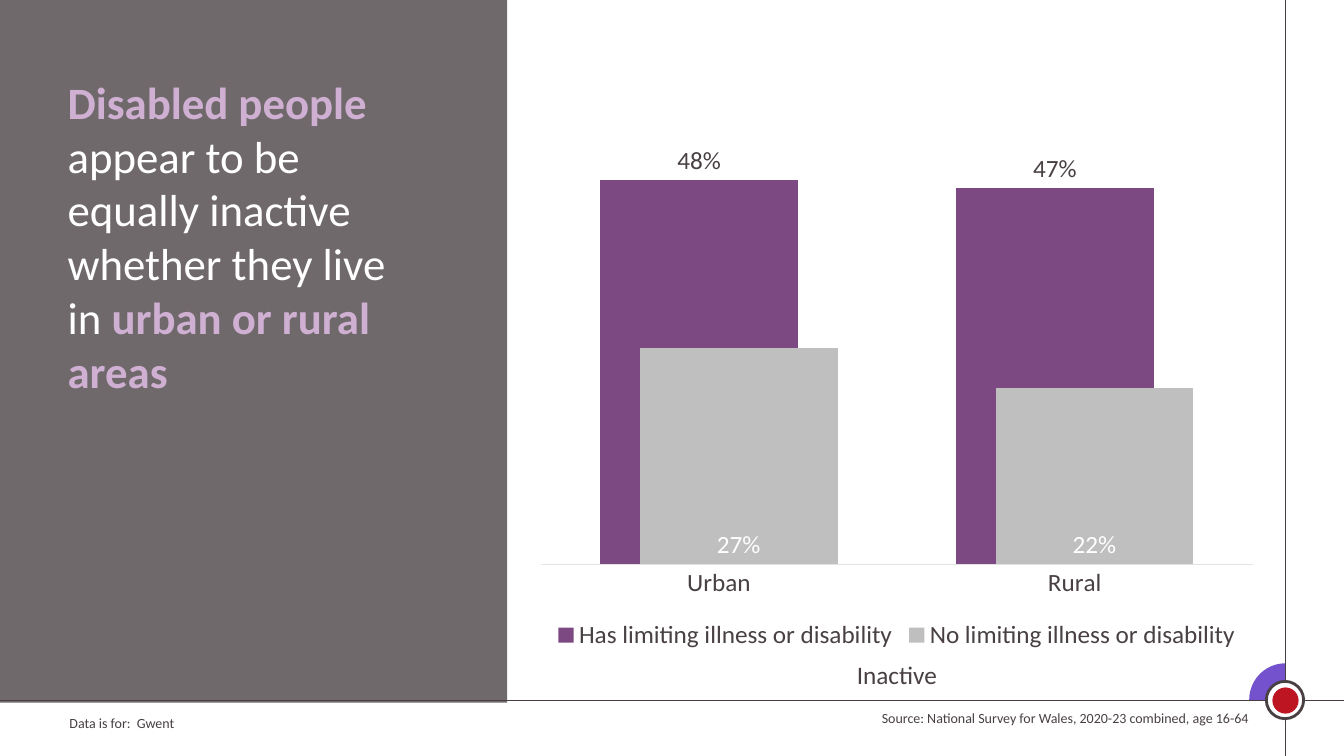
from dataclasses import dataclass

import pptx
import pptx.chart.data
import pptx.dml.color
import pptx.enum.chart
import pptx.enum.shapes
import pptx.enum.text
import pptx.oxml
import pptx.oxml.ns
import pptx.util
from pptx.util import Inches

SHAPE = pptx.enum.shapes.MSO_SHAPE
ALIGN = pptx.enum.text.PP_ALIGN
LABEL = pptx.enum.chart.XL_LABEL_POSITION
DARK, WHITE, LILAC = "484043", "FFFFFF", "CFB0D3"
FONT = "Calibri"


@dataclass
class Box:
    left: float
    top: float
    width: float
    height: float

    def place(self) -> tuple:
        return tuple(Inches(n) for n in (self.left, self.top, self.width, self.height))


@dataclass
class Form:
    kind: int
    box: Box
    fill: str
    line: str = ""
    weight: float = 0
    alpha: int = 100
    angles: tuple = ()


@dataclass
class Bars:
    name: str
    values: tuple
    color: str
    ink: str
    spot: int


def rgb(code: str) -> pptx.dml.color.RGBColor:
    return pptx.dml.color.RGBColor.from_string(code)


def style(font, size: float, color: str, bold: bool = False) -> None:
    font.name, font.size, font.bold = FONT, pptx.util.Pt(size), bold
    font.color.rgb = rgb(color)


def write(shape, *parts: tuple, size: float = 10, align=ALIGN.LEFT) -> None:
    """Fill a shape with (text, color, bold) runs."""
    frame = shape.text_frame
    frame.word_wrap = True
    frame.auto_size = pptx.enum.text.MSO_AUTO_SIZE.NONE
    frame.vertical_anchor = pptx.enum.text.MSO_ANCHOR.TOP
    para = frame.paragraphs[0]
    para.alignment = align
    for text, color, bold in parts:
        run = para.add_run()
        run.text = text
        style(run.font, size, color, bold)


def label(slide, box: Box, text: str, size: float = 10, align=ALIGN.LEFT) -> None:
    write(slide.shapes.add_textbox(*box.place()), (text, DARK, False),
          size=size, align=align)


def draw(slide, form: Form) -> None:
    shape = slide.shapes.add_shape(form.kind, *form.box.place())
    shape.shadow.inherit = False
    for spot, angle in enumerate(form.angles):
        shape.adjustments[spot] = angle
    shape.fill.solid()
    shape.fill.fore_color.rgb = rgb(form.fill)
    if form.alpha < 100:
        tint = shape.element.spPr.find(".//" + pptx.oxml.ns.qn("a:srgbClr"))
        tint.append(pptx.oxml.parse_xml(
            f'<a:alpha {pptx.oxml.ns.nsdecls("a")} val="{form.alpha * 1000}"/>'))
    if form.line:
        shape.line.color.rgb = rgb(form.line)
        shape.line.width = pptx.util.Pt(form.weight)
    else:
        shape.line.fill.background()


def rule(slide, start: tuple, end: tuple) -> None:
    line = slide.shapes.add_connector(
        pptx.enum.shapes.MSO_CONNECTOR.STRAIGHT,
        *(Inches(n) for n in start + end))
    line.line.color.rgb = rgb(DARK)
    line.line.width = pptx.util.Pt(1)
    line.element.spPr.append(pptx.oxml.parse_xml(
        f'<a:effectLst {pptx.oxml.ns.nsdecls("a")}/>'))


def plot(slide, box: Box, groups: list, bars: list) -> None:
    data = pptx.chart.data.CategoryChartData(number_format="0%")
    data.categories = groups
    for item in bars:
        data.add_series(item.name, item.values)
    chart = slide.shapes.add_chart(
        pptx.enum.chart.XL_CHART_TYPE.COLUMN_CLUSTERED, *box.place(), data).chart
    style(chart.font, 18, DARK)
    chart.has_title = False
    chart.has_legend = True
    chart.legend.position = pptx.enum.chart.XL_LEGEND_POSITION.BOTTOM
    chart.legend.include_in_layout = False
    style(chart.legend.font, 18, DARK)

    # Axes
    base = chart.category_axis
    base.major_tick_mark = pptx.enum.chart.XL_TICK_MARK.NONE
    base.format.line.color.rgb = rgb("E5E1E3")
    base.format.line.width = pptx.util.Pt(0.75)
    style(base.tick_labels.font, 18, DARK)
    scale = chart.value_axis
    scale.visible = scale.has_major_gridlines = False
    scale.minimum_scale, scale.maximum_scale = 0, 0.5

    # Columns
    area = chart.plots[0]
    area.gap_width, area.overlap, area.vary_by_categories = 60, 80, False
    for series, item in zip(area.series, bars):
        series.format.fill.solid()
        series.format.fill.fore_color.rgb = rgb(item.color)
        tags = series.data_labels
        tags.show_value = True
        tags.number_format, tags.number_format_is_linked = "0%", False
        tags.position = item.spot
        style(tags.font, 18, item.ink)


def main() -> None:
    deck = pptx.Presentation()
    deck.slide_width, deck.slide_height = Inches(13.33), Inches(7.5)
    slide = deck.slides.add_slide(deck.slide_layouts[5])

    # Frame lines, corner badge and side panel
    draw(slide, Form(SHAPE.PIE, Box(12.39, 6.58, 0.72, 0.72), "7452CD",
                     angles=(106.62, 162)))
    rule(slide, (12.75, 0), (12.75, 7.5))
    rule(slide, (0, 6.95), (13.33, 6.95))
    for form in (
        Form(SHAPE.OVAL, Box(12.56, 6.76, 0.37, 0.37), WHITE, DARK, 2),
        Form(SHAPE.OVAL, Box(12.62, 6.82, 0.26, 0.26), "BD1622"),
        Form(SHAPE.RECTANGLE, Box(-0.01, 0, 5.04, 6.97), DARK, alpha=78),
    ):
        draw(slide, form)

    # Title, raised above the panel
    title = slide.shapes.title
    title.left, title.top, title.width, title.height = Box(0.57, 0.69, 3.73, 3.77).place()
    write(title, ("Disabled people ", LILAC, True),
          ("appear to be equally inactive whether they live in ", WHITE, False),
          ("urban or rural areas", LILAC, True), size=32)
    title.element.getparent().append(title.element)

    # Notes and chart
    label(slide, Box(0.59, 7.04, 4.39, 0.27), "Data is for:\u00a0 Gwent".replace("\u00a0", " "))
    label(slide, Box(8.32, 6.99, 4.16, 0.27),
          "Source: National Survey for Wales, 2020-23 combined, age 16-64",
          align=ALIGN.RIGHT)
    label(slide, Box(8.4, 6.49, 1.22, 0.4), "Inactive", size=18)
    plot(slide, Box(5.22, 1.45, 7.35, 5.05), ["Urban", "Rural"], [
        Bars("Has limiting illness or disability", (0.48, 0.47), "7C4982",
             DARK, LABEL.OUTSIDE_END),
        Bars("No limiting illness or disability", (0.27, 0.22), "BFBFBF",
             WHITE, LABEL.INSIDE_BASE),
    ])
    deck.save("out.pptx")


if __name__ == "__main__":
    main()
